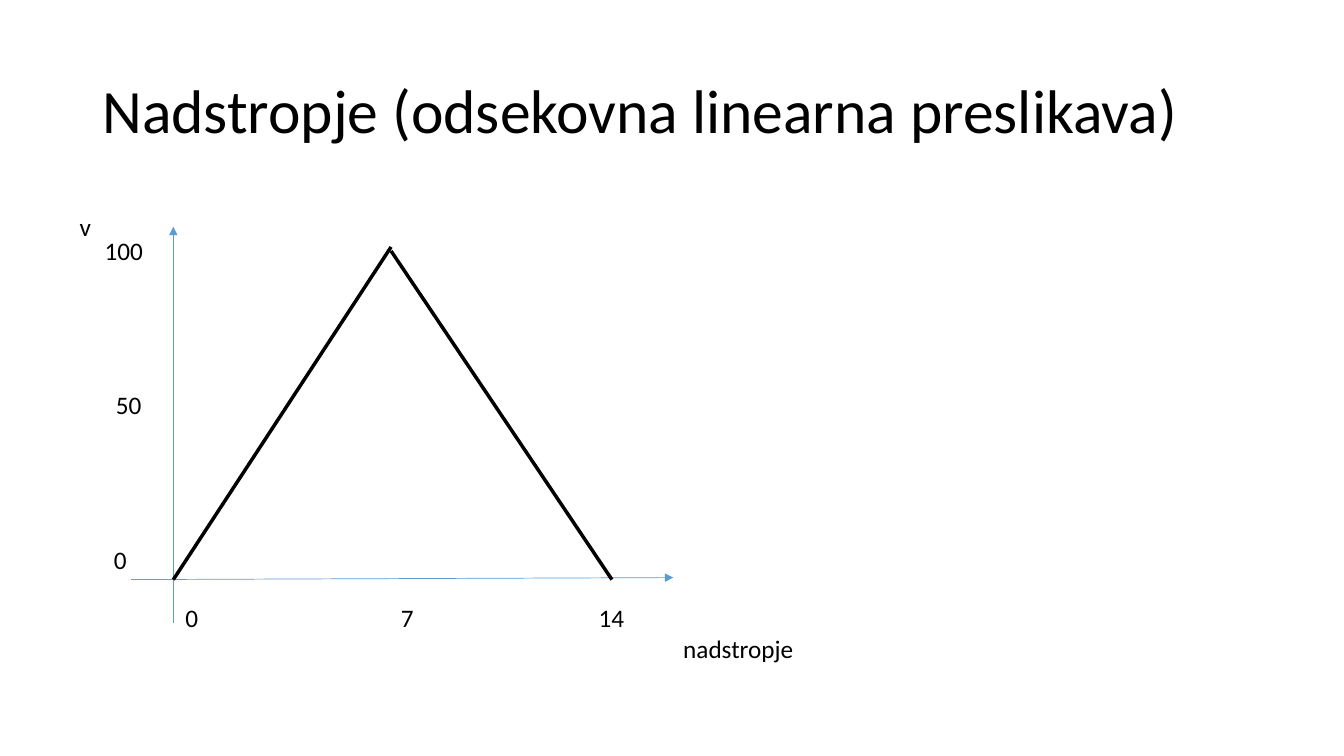
from dataclasses import dataclass

from lxml.etree import SubElement
from pptx import Presentation
from pptx.dml.color import RGBColor
from pptx.enum.shapes import MSO_CONNECTOR
from pptx.enum.text import MSO_ANCHOR, MSO_AUTO_SIZE
from pptx.oxml.ns import qn
from pptx.slide import Slide
from pptx.util import Inches, Length, Pt


@dataclass(frozen=True)
class Theme:
    font: str = "Calibri"
    ink: RGBColor = RGBColor(0x00, 0x00, 0x00)
    axis: RGBColor = RGBColor(0x5B, 0x9B, 0xD5)
    paper: RGBColor = RGBColor(0xFF, 0xFF, 0xFF)
    title_size: float = 44
    label_size: float = 18
    axis_width: float = 0.5
    graph_width: float = 2.5


@dataclass(frozen=True)
class Label:
    text: str
    left: float
    top: float
    width: float
    height: float = 5.33
    is_title: bool = False


@dataclass(frozen=True)
class Stroke:
    start: tuple[float, float]
    end: tuple[float, float]
    is_axis: bool = False


THEME = Theme()
SLIDE_WIDTH = Inches(13.333)
SLIDE_HEIGHT = Inches(7.5)

ORIGIN_X = 12.9
BASELINE_Y = 76.67
PEAK_X = 29.1
TICK_TOP = 79.07
DIGIT_WIDTH = 2.48
TWO_DIGIT_WIDTH = 3.45

AXES = [
    Stroke((ORIGIN_X, 82.4), (ORIGIN_X, 30), is_axis=True),
    Stroke((9.75, BASELINE_Y), (50.1, 76.4), is_axis=True),
]
LABELS = [
    Label("Nadstropje (odsekovna linearna preslikava)", 6.88, 5.33, 86.25, 19.33, is_title=True),
    Label("nadstropje", 50.1, 83.07, 9.75),
    Label("v", 5.18, 27.33, 2.4),
    Label("0", 7.73, 71.33, DIGIT_WIDTH),
    Label("100", 7.05, 30.53, 4.43),
    Label("0", 13.05, TICK_TOP, DIGIT_WIDTH),
    Label("14", 43.8, TICK_TOP, TWO_DIGIT_WIDTH),
    Label("7", PEAK_X, TICK_TOP, DIGIT_WIDTH),
    Label("50", 7.88, 50.8, TWO_DIGIT_WIDTH),
]
GRAPH = [
    Stroke((PEAK_X, 32.67), (ORIGIN_X, BASELINE_Y)),
    Stroke((45.53, BASELINE_Y), (PEAK_X, 33.2)),
]


def across(percent: float) -> Length:
    return Length(round(SLIDE_WIDTH * percent / 100))


def down(percent: float) -> Length:
    return Length(round(SLIDE_HEIGHT * percent / 100))


def draw_label(page: Slide, label: Label) -> None:
    box = page.shapes.add_textbox(
        across(label.left), down(label.top), across(label.width), down(label.height)
    )
    frame = box.text_frame
    frame.text = label.text
    frame.word_wrap = label.is_title
    para = frame.paragraphs[0]
    if label.is_title:
        frame.vertical_anchor = MSO_ANCHOR.MIDDLE
        para.line_spacing = 0.9
    else:
        frame.auto_size = MSO_AUTO_SIZE.SHAPE_TO_FIT_TEXT
    for span in para.runs:
        span.font.name = THEME.font
        span.font.size = Pt(THEME.title_size if label.is_title else THEME.label_size)
        span.font.color.rgb = THEME.ink


def draw_stroke(page: Slide, stroke: Stroke) -> None:
    connector = page.shapes.add_connector(
        MSO_CONNECTOR.STRAIGHT,
        across(stroke.start[0]),
        down(stroke.start[1]),
        across(stroke.end[0]),
        down(stroke.end[1]),
    )
    connector.line.color.rgb = THEME.axis if stroke.is_axis else THEME.ink
    connector.line.width = Pt(THEME.axis_width if stroke.is_axis else THEME.graph_width)
    properties = connector._element.spPr
    if stroke.is_axis:
        SubElement(properties.find(qn("a:ln")), qn("a:tailEnd"), type="triangle")
    SubElement(properties, qn("a:effectLst"))


def main() -> None:
    deck = Presentation()
    deck.slide_width = SLIDE_WIDTH
    deck.slide_height = SLIDE_HEIGHT
    page = deck.slides.add_slide(deck.slide_layouts[6])
    page.background.fill.solid()
    page.background.fill.fore_color.rgb = THEME.paper
    for axis in AXES:
        draw_stroke(page, axis)
    for label in LABELS:
        draw_label(page, label)
    for segment in GRAPH:
        draw_stroke(page, segment)
    deck.save("out.pptx")


if __name__ == "__main__":
    main()
